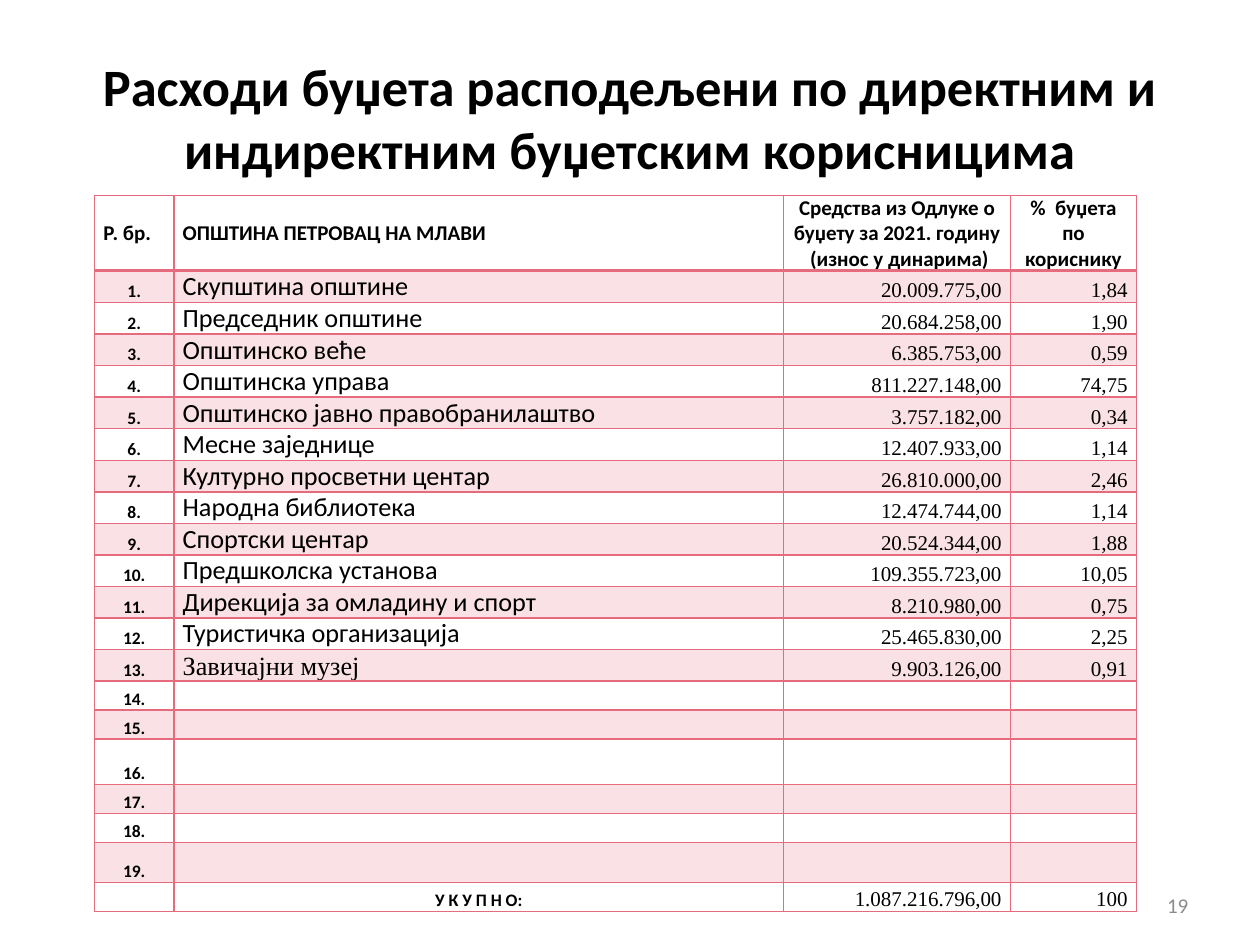
from lxml import etree
from pptx import Presentation
from pptx.dml.color import RGBColor
from pptx.enum.text import MSO_ANCHOR, PP_ALIGN
from pptx.oxml.ns import qn
from pptx.util import Inches, Pt

HEADINGS = [
    "Р. бр.",
    "ОПШТИНА ПЕТРОВАЦ НА МЛАВИ",
    "Средства из Одлуке о буџету за 2021. годину  (износ у динарима)",
    "%  буџета по кориснику",
]
BENEFICIARIES = [
    ("Скупштина општине", "20.009.775,00", "1,84"),
    ("Председник општине", "20.684.258,00", "1,90"),
    ("Општинско веће", "6.385.753,00", "0,59"),
    ("Општинска управа", "811.227.148,00", "74,75"),
    ("Општинско јавно правобранилаштво", "3.757.182,00", "0,34"),
    ("Месне заједнице", "12.407.933,00", "1,14"),
    ("Културно просветни центар", "26.810.000,00", "2,46"),
    ("Народна библиотека", "12.474.744,00", "1,14"),
    ("Спортски центар", "20.524.344,00", "1,88"),
    ("Предшколска установа", "109.355.723,00", "10,05"),
    ("Дирекција за омладину и спорт", "8.210.980,00", "0,75"),
    ("Туристичка организација", "25.465.830,00", "2,25"),
    ("Завичајни музеј", "9.903.126,00", "0,91"),
]
NUMBERED_ROWS = 19
TOTAL = ("", "У К У П Н О:", "1.087.216.796,00", "100")
COLUMN_WIDTHS = [0.63, 4.84, 1.8, 1]
ROW_HEIGHTS = [0.6] + [0.25] * 12 + [0.23] * 3 + [0.36] + [0.23] * 2 + [0.32, 0.23]
LEFT, CENTER, RIGHT = PP_ALIGN.LEFT, PP_ALIGN.CENTER, PP_ALIGN.RIGHT


def rgb(hex_color):
    return RGBColor.from_string(hex_color)


class BudgetSlide:
    sans = "Calibri"
    serif = "Times New Roman"
    ink = "000000"
    muted = "8C8C8C"
    accent = "E66C7D"

    def __init__(self, slide):
        self.slide = slide

    def set_text(self, frame, text, size, align, font=None, bold=False, color=None):
        frame.text = text
        paragraph = frame.paragraphs[0]
        paragraph.alignment = align
        for run in paragraph.runs:
            run.font.name = font or self.sans
            run.font.size = Pt(size)
            run.font.bold = bold
            run.font.color.rgb = rgb(color or self.ink)
        if not text:
            etree.SubElement(paragraph._p, qn("a:endParaRPr"), sz=str(size * 100))

    def text(self, box, text, size, align, **style):
        frame = self.slide.shapes.add_textbox(*map(Inches, box)).text_frame
        frame.word_wrap = True
        frame.vertical_anchor = MSO_ANCHOR.MIDDLE
        self.set_text(frame, text, size, align, **style)

    def table(self, left, top, widths, heights):
        size = Inches(sum(widths)), Inches(sum(heights))
        table = self.slide.shapes.add_table(
            len(heights), len(widths), Inches(left), Inches(top), *size
        ).table
        table.first_row = table.horz_banding = False
        for column, width in zip(table.columns, widths):
            column.width = Inches(width)
        for row, height in zip(table.rows, heights):
            row.height = Inches(height)
        return table

    def border(self, cell, side, width):
        line = etree.SubElement(
            cell._tc.get_or_add_tcPr(), qn(f"a:ln{side}"), w=str(Pt(width))
        )
        fill = etree.SubElement(line, qn("a:solidFill"))
        etree.SubElement(fill, qn("a:srgbClr"), val=self.accent)

    def cell(self, cell, text, size, align, anchor, shaded, top=1, bottom=1, **style):
        cell.margin_left = cell.margin_right = Inches(0.07)
        cell.margin_top = cell.margin_bottom = 0
        cell.vertical_anchor = anchor
        for side, width in (("L", 1), ("R", 1), ("T", top), ("B", bottom)):
            self.border(cell, side, width)
        if shaded:
            cell.fill.solid()
            cell.fill.fore_color.rgb = rgb(self.accent)
            tint = cell._tc.tcPr.find(f"{qn('a:solidFill')}/{qn('a:srgbClr')}")
            etree.SubElement(tint, qn("a:alpha"), val="20000")
        else:
            cell.fill.background()
        self.set_text(cell.text_frame, text, size, align, **style)

    def header_row(self, table):
        for column, heading in enumerate(HEADINGS):
            align = LEFT if column < 2 else CENTER
            self.cell(table.cell(0, column), heading, 12, align, MSO_ANCHOR.MIDDLE,
                      False, bottom=2, bold=True)

    def body_row(self, table, row, values, name_style):
        amount_style = dict(size=12, align=RIGHT, font=self.serif)
        styles = [dict(size=10, align=CENTER, bold=True), name_style,
                  amount_style, amount_style]
        for column, (value, style) in enumerate(zip(values, styles)):
            if not value:
                style = dict(style, size=10)
            self.cell(table.cell(row, column), value, anchor=MSO_ANCHOR.BOTTOM,
                      shaded=row % 2 == 1, top=2 if row == 1 else 1, **style)


def main():
    presentation = Presentation()
    presentation.slide_width = Inches(10)
    presentation.slide_height = Inches(7.5)
    budget = BudgetSlide(presentation.slides.add_slide(presentation.slide_layouts[6]))

    budget.text((0.5, 0.3, 9, 1.25),
                "Расходи буџета расподељени по директним и "
                "индиректним буџетским корисницима", 30, CENTER, bold=True)

    expenses = budget.table(0.75, 1.55, COLUMN_WIDTHS, ROW_HEIGHTS)
    budget.header_row(expenses)
    unused = [("", "", "")] * (NUMBERED_ROWS - len(BENEFICIARIES))
    for number, beneficiary in enumerate(BENEFICIARIES + unused, start=1):
        font = budget.serif if number == len(BENEFICIARIES) else budget.sans
        budget.body_row(expenses, number, (f"{number}.", *beneficiary),
                        dict(size=15, align=LEFT, font=font))
    budget.body_row(expenses, NUMBERED_ROWS + 1, TOTAL,
                    dict(size=10, align=CENTER, bold=True))

    budget.text((7.2, 6.98, 2.33, 0.4), "19", 12, RIGHT, color=budget.muted)
    presentation.save("out.pptx")


if __name__ == "__main__":
    main()
